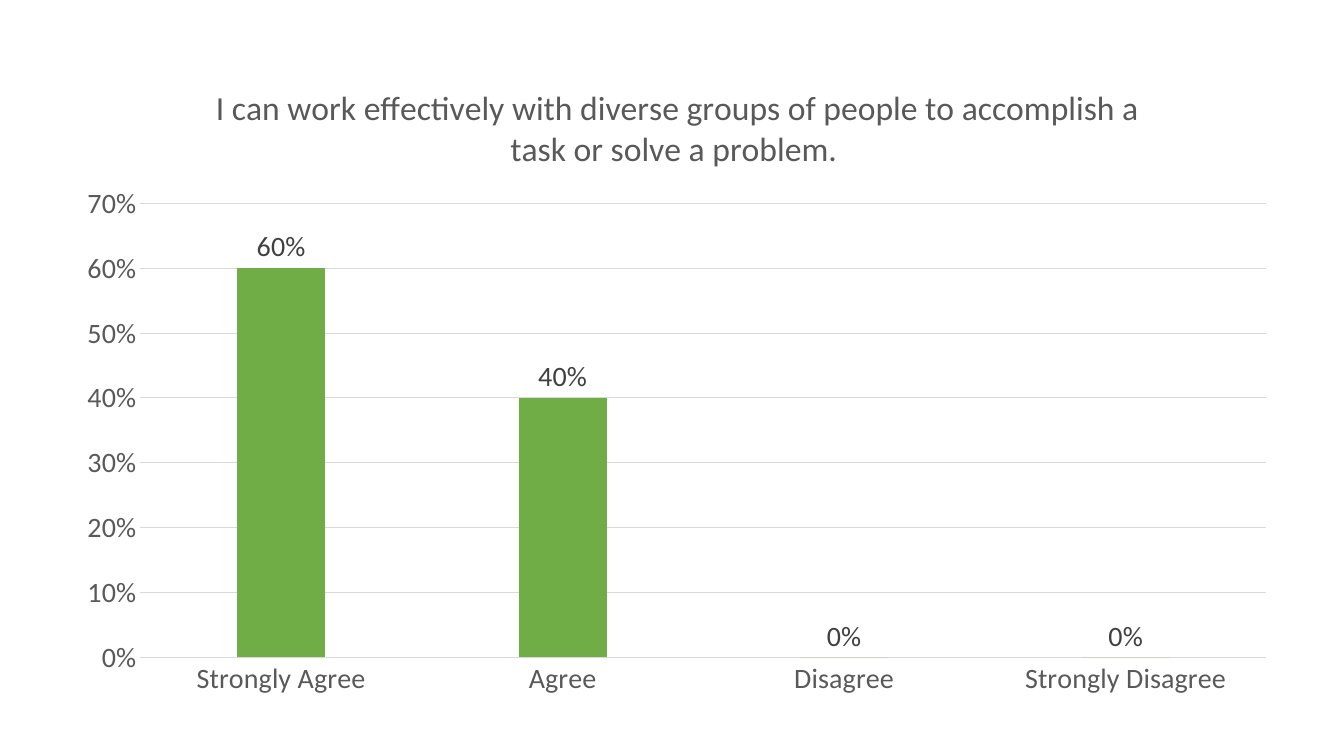
from dataclasses import dataclass

from lxml import etree
from pptx import Presentation
from pptx.chart.data import CategoryChartData
from pptx.dml.color import RGBColor
from pptx.enum.chart import XL_CHART_TYPE, XL_LABEL_POSITION, XL_TICK_MARK
from pptx.oxml.ns import qn
from pptx.util import Pt

COLUMNS = XL_CHART_TYPE.COLUMN_CLUSTERED
OUTSIDE_END = XL_LABEL_POSITION.OUTSIDE_END
NO_TICK = XL_TICK_MARK.NONE

EMU_PER_PX = 9144  # 100 px to the inch
FONT = "Calibri"
GREEN, GREY, DARK, PALE = "70AD47", "595959", "404040", "D9D9D9"
QUESTION = ("I can work effectively with diverse groups of people "
            "to accomplish a task or solve a problem. ")


@dataclass
class Answer:
    label: str
    share: float


ANSWERS = [
    Answer("Strongly\u00a0Agree", 0.6),
    Answer("Agree", 0.4),
    Answer("Disagree", 0),
    Answer("Strongly\u00a0Disagree", 0),
]


def px(n: int) -> int:
    return n * EMU_PER_PX


def rgb(value: str) -> RGBColor:
    return RGBColor.from_string(value)


def set_font(font, size: int, color: str) -> None:
    font.name, font.size, font.bold = FONT, Pt(size), False
    font.color.rgb = rgb(color)


def set_line(line) -> None:
    line.color.rgb = rgb(PALE)
    line.width = Pt(0.75)


def set_layout(parent, index: int, **values) -> None:
    """Place a chart part by fractions of the chart's size."""
    for old in parent.findall(qn("c:layout")):
        parent.remove(old)
    layout = etree.Element(qn("c:layout"))
    manual = etree.SubElement(layout, qn("c:manualLayout"))
    for tag, val in values.items():
        etree.SubElement(manual, qn(f"c:{tag}")).set("val", str(val))
    parent.insert(index, layout)


def format_axes(chart) -> None:
    for axis in (chart.category_axis, chart.value_axis):
        axis.major_tick_mark = axis.minor_tick_mark = NO_TICK
        set_font(axis.tick_labels.font, 20, GREY)
    set_line(chart.category_axis.format.line)
    axis = chart.value_axis
    axis.format.line.fill.background()
    set_line(axis.major_gridlines.format.line)
    axis.minimum_scale, axis.maximum_scale, axis.major_unit = 0, 0.7, 0.1
    axis.tick_labels.number_format = "0%"
    axis.tick_labels.number_format_is_linked = False


def format_columns(plot) -> None:
    plot.gap_width, plot.overlap = 219, -27
    plot.vary_by_categories = False
    series = plot.series[0]
    series.format.fill.solid()
    series.format.fill.fore_color.rgb = rgb(GREEN)
    labels = series.data_labels
    labels.show_value = True
    labels.position = OUTSIDE_END
    labels.number_format = "0%"
    labels.number_format_is_linked = False
    set_font(labels.font, 20, DARK)


def add_survey_chart(slide) -> None:
    data = CategoryChartData(number_format="0%")
    data.categories = [a.label for a in ANSWERS]
    data.add_series("Series 1", [a.share for a in ANSWERS])
    chart = slide.shapes.add_chart(
        COLUMNS, px(62), px(52), px(1218), px(651), data).chart
    chart.has_legend = False
    set_font(chart.font, 20, "000000")

    chart.has_title = True
    title = chart.chart_title
    title.include_in_layout = False
    p = title.text_frame.paragraphs[0]
    p.text = QUESTION
    set_font(p.font, 24, GREY)
    set_font(p.runs[0].font, 24, GREY)

    format_axes(chart)
    format_columns(chart.plots[0])
    root = chart.element if hasattr(chart, "element") else chart._chartSpace
    set_layout(root.find(".//" + qn("c:title")), 1,
               xMode="edge", yMode="edge", x=0.12, y=0.04)
    set_layout(root.find(".//" + qn("c:plotArea")), 0,
               layoutTarget="inner", xMode="edge", yMode="edge",
               x=0.0635, y=0.23, w=0.917, h=0.692)


def main() -> None:
    prs = Presentation()
    prs.slide_width, prs.slide_height = px(1333), px(750)
    slide = prs.slides.add_slide(prs.slide_layouts[6])
    add_survey_chart(slide)
    prs.save("out.pptx")


if __name__ == "__main__":
    main()
